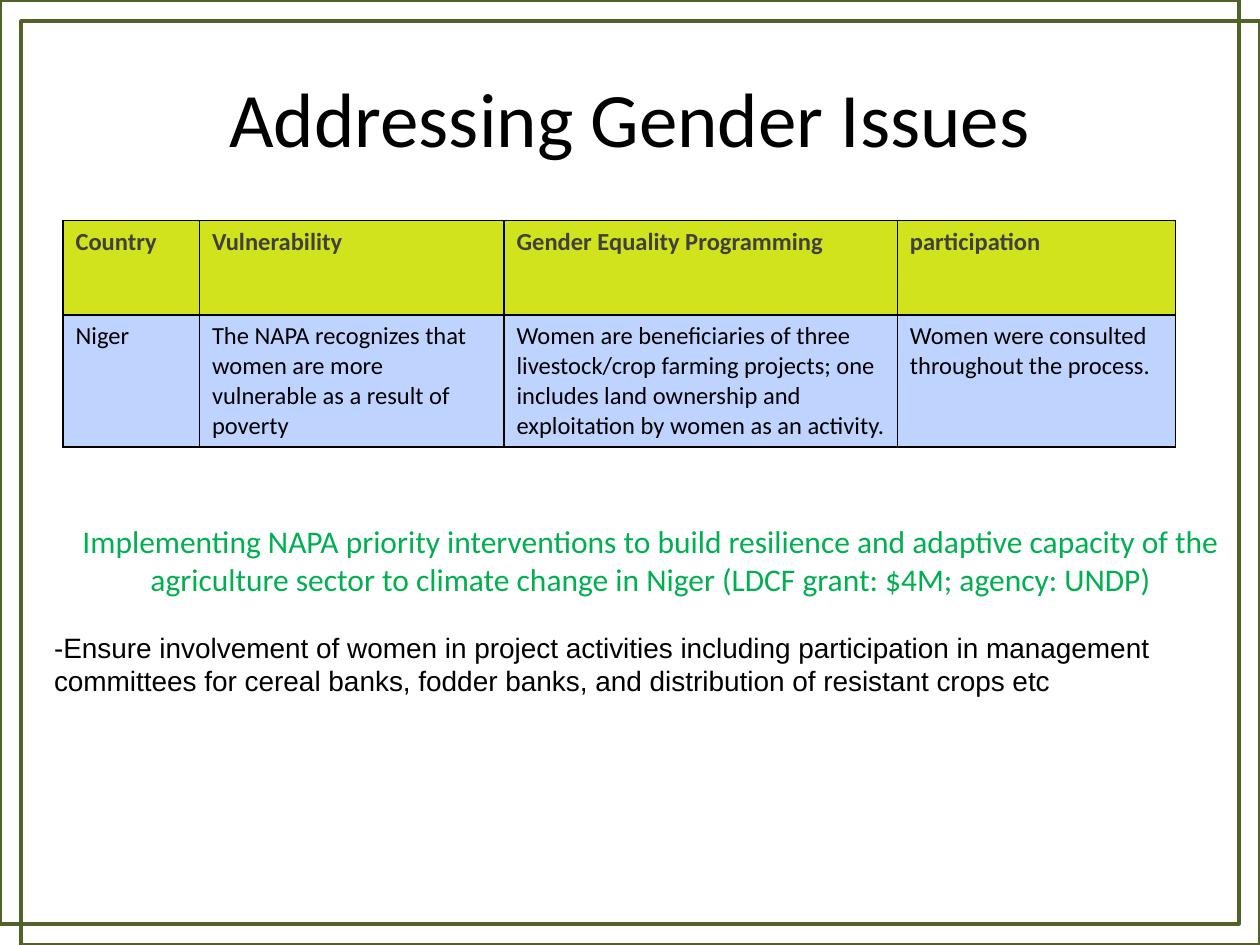
from lxml.etree import SubElement
from pptx import Presentation
from pptx.dml.color import RGBColor
from pptx.enum.shapes import MSO_SHAPE
from pptx.enum.text import MSO_ANCHOR, PP_ALIGN
from pptx.oxml.ns import qn
from pptx.util import Cm, Pt

COLOURS = {
    "black": "000000",
    "heading": "404040",
    "header_fill": "D0E31D",
    "body_fill": "BFD3FF",
    "green": "00B050",
    "frame": "4F6228",
}

COLUMN_WIDTHS = [2.75, 6.14, 7.93, 5.61]
ROW_HEIGHTS = [1.9, 2.65]
ROWS = [
    ["Country", "Vulnerability", "Gender Equality Programming", "participation"],
    [
        "Niger",
        "The NAPA recognizes that women are more vulnerable as a result of\npoverty",
        "Women are beneficiaries of three\nlivestock/crop farming projects; one\n"
        "includes land ownership and\nexploitation by women as an activity.",
        "Women were consulted\nthroughout the process.",
    ],
]
HEADER = {"name": "Calibri", "size": Pt(14), "bold": True, "colour": "heading"}
BODY = {"name": "Calibri", "size": Pt(14), "bold": False, "colour": "black"}
TITLE = {"name": "Calibri", "size": Pt(44), "colour": "black"}
PROJECT = {"name": "Calibri", "size": Pt(18), "colour": "green"}
ACTION = {"name": "Arial", "size": Pt(16), "colour": "black"}


def colour(name):
    return RGBColor.from_string(COLOURS[name])


def write(para, text, font_format, **para_format):
    span = para.add_run()
    span.text = text
    for key, value in font_format.items():
        if key == "colour":
            span.font.color.rgb = colour(value)
        else:
            setattr(span.font, key, value)
    for key, value in para_format.items():
        setattr(para, key, value)


def add_text_box(page, left, top, width, height):
    box = page.shapes.add_textbox(Cm(left), Cm(top), Cm(width), Cm(height))
    box.text_frame.word_wrap = True
    box.text_frame.vertical_anchor = MSO_ANCHOR.MIDDLE
    return box.text_frame


def add_borders(cell):
    properties = cell._tc.get_or_add_tcPr()
    for side in ("a:lnL", "a:lnR", "a:lnT", "a:lnB"):
        line = SubElement(properties, qn(side), w=str(Pt(1)))
        fill = SubElement(line, qn("a:solidFill"))
        SubElement(fill, qn("a:srgbClr"), val=COLOURS["black"])


def fill_cell(cell, text, font_format, fill_name):
    add_borders(cell)
    cell.fill.solid()
    cell.fill.fore_color.rgb = colour(fill_name)
    for index, line in enumerate(text.split("\n")):
        frame = cell.text_frame
        para = frame.add_paragraph() if index else frame.paragraphs[0]
        write(para, line, font_format)


def add_country_table(page):
    table = page.shapes.add_table(
        len(ROWS), len(COLUMN_WIDTHS), Cm(1.27), Cm(4.45),
        Cm(sum(COLUMN_WIDTHS)), Cm(sum(ROW_HEIGHTS)),
    ).table
    table.first_row = table.horz_banding = False
    for column, width in zip(table.columns, COLUMN_WIDTHS):
        column.width = Cm(width)
    for row, height in zip(table.rows, ROW_HEIGHTS):
        row.height = Cm(height)
    styles = [(HEADER, "header_fill"), (BODY, "body_fill")]
    for row, texts, style in zip(table.rows, ROWS, styles):
        for cell, text in zip(row.cells, texts):
            fill_cell(cell, text, *style)


def add_frame(page, offset):
    frame = page.shapes.add_shape(
        MSO_SHAPE.RECTANGLE, Cm(offset), Cm(offset), Cm(24.97), Cm(18.62)
    )
    frame.shadow.inherit = False
    frame.fill.background()
    frame.line.color.rgb = colour("frame")
    frame.line.width = Pt(2.25)


def main():
    deck = Presentation()
    deck.slide_width, deck.slide_height = Cm(25.4), Cm(19.05)
    page = deck.slides.add_slide(deck.slide_layouts[6])

    # Country comparison
    add_country_table(page)

    # Project and its action
    project = add_text_box(page, 0.84, 10.39, 24.56, 3.81)
    write(
        project.paragraphs[0],
        "Implementing NAPA priority interventions to build resilience and "
        "adaptive capacity of the agriculture sector to climate change in "
        "Niger (LDCF grant: $4M; agency: UNDP)",
        PROJECT, alignment=PP_ALIGN.CENTER,
    )
    write(
        project.add_paragraph(),
        "-Ensure involvement of women in project activities including "
        "participation in management committees for cereal banks, fodder "
        "banks, and distribution of resistant crops etc",
        ACTION, space_before=Pt(18.5),
    )

    # Title
    title = add_text_box(page, 1.27, 0.76, 22.86, 3.18)
    write(title.paragraphs[0], "Addressing Gender Issues", TITLE,
          alignment=PP_ALIGN.CENTER)

    # Two overlapping frames
    for offset in (0.43, 0):
        add_frame(page, offset)

    deck.save("out.pptx")


if __name__ == "__main__":
    main()
